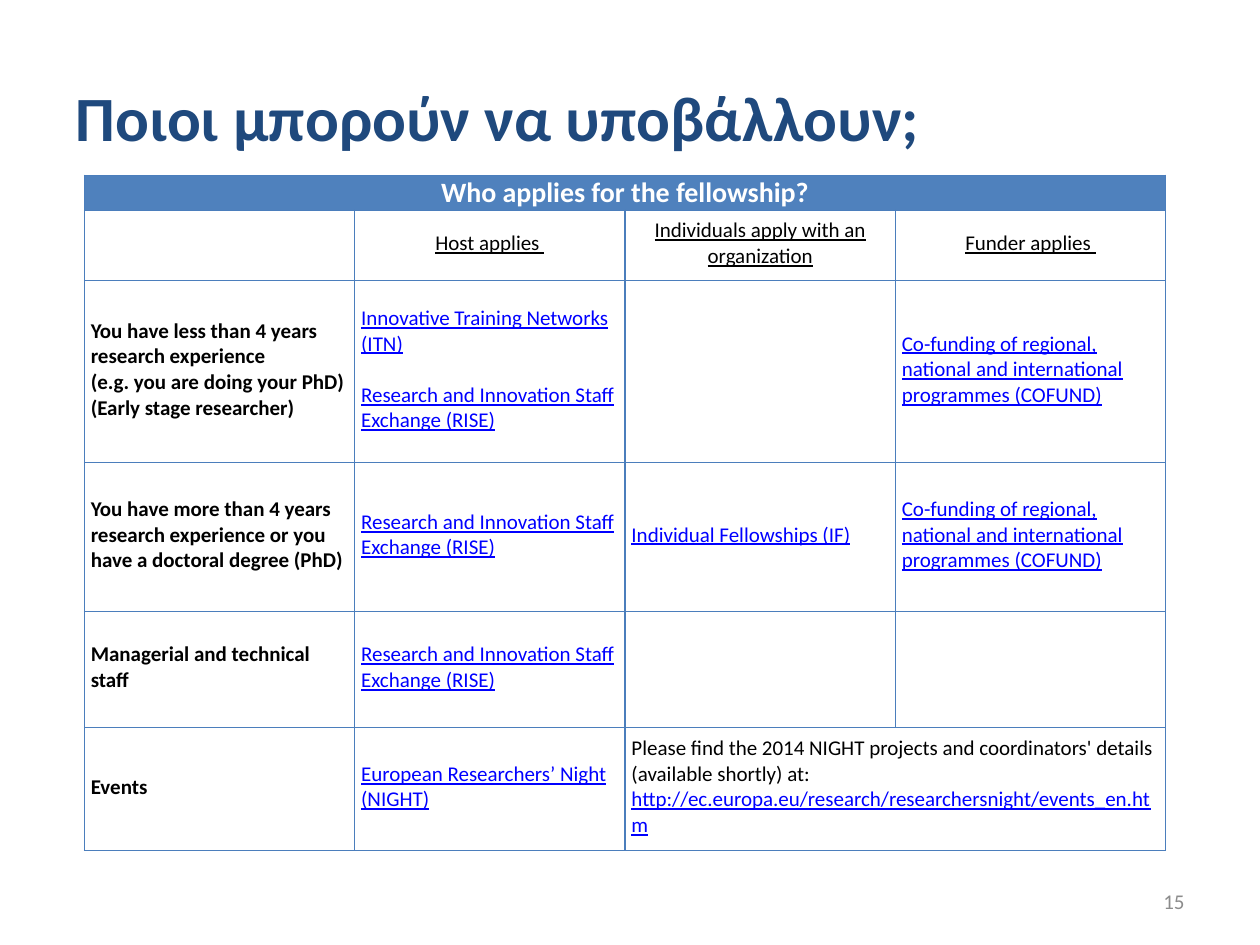
import pptx
import pptx.util
import pptx.dml.color
import pptx.enum.text
import pptx.oxml
import pptx.oxml.ns

Cm = pptx.util.Cm
Pt = pptx.util.Pt
ALIGN = pptx.enum.text.PP_ALIGN
MID = pptx.enum.text.MSO_ANCHOR.MIDDLE

HUES = {"title": "1F497D", "band": "4F81BD", "edge": "4B7EBC", "link": "0000FF",
        "text": "000000", "white": "FFFFFF", "page": "8C8C8C"}

# style: size, colour, bold, underline
STYLES = {"title": (36, "title", True, False), "band": (16, "white", True, False),
          "head": (12, "text", False, True), "side": (12, "text", True, False),
          "link": (12, "link", False, True), "text": (12, "text", False, False),
          "page": (12, "page", False, False)}

TITLE = "Ποιοι μπορούν να υποβάλλουν;"
BAND = "Who applies for the fellowship?"
PAGE = "15"

ITN = [("link", "Innovative Training Networks (ITN)")]
RISE = [("link", "Research and Innovation Staff Exchange (RISE)")]
FUND = [("link", "Co-funding of regional, national and international programmes (COFUND)")]
SOLO = [("link", "Individual Fellowships (IF)")]
NIGHT = [("link", "European Researchers’ Night (NIGHT)")]
NOTE = [("text", "Please find the 2014 NIGHT projects and coordinators' details "
                 "(available shortly) at:"),
        ("break", ""),
        ("link", "http://ec.europa.eu/research/researchersnight/events_en.htm")]
LESS = [("side", "You have less than 4 years research experience "),
        ("break", ""),
        ("side", "(e.g. you are doing your PhD) (Early stage researcher)")]
MORE = [("side", "You have more than 4 years research experience "
                 "or you have a doctoral degree (PhD)")]

# each cell is a list of paragraphs, each paragraph a list of runs
ROWS = [
    [[[("band", BAND)]], [], [], []],
    [[], [[("head", "Host applies ")]],
     [[("head", "Individuals apply with an organization")]],
     [[("head", "Funder applies ")]]],
    [[LESS], [ITN, RISE], [], [FUND]],
    [[MORE], [RISE], [SOLO], [FUND]],
    [[[("side", "Managerial and technical staff")]], [RISE], [], []],
    [[[("side", "Events")]], [NIGHT], [NOTE], []],
]
SPANS = [((0, 0), (0, 3)), ((5, 2), (5, 3))]
HIGHS = [0.71, 1.41, 3.67, 3, 2.34, 2.48]
WIDE = 5.45


def hue(name):
    return pptx.dml.color.RGBColor.from_string(HUES[name])


def fill_para(para, runs, align=ALIGN.LEFT):
    para.alignment = align
    for kind, text in runs:
        if kind == "break":
            para.add_line_break()
            continue
        run = para.add_run()
        run.text = text
        size, tint, bold, under = STYLES[kind]
        font = run.font
        font.name, font.size = "Calibri", Pt(size)
        font.bold, font.underline = bold, under
        font.color.rgb = hue(tint)


def add_edges(cell):
    props = cell._tc.get_or_add_tcPr()
    for side in ("lnL", "lnR", "lnT", "lnB"):
        props.append(pptx.oxml.parse_xml(
            f'<a:{side} {pptx.oxml.ns.nsdecls("a")} w="{Pt(0.75)}"><a:solidFill>'
            f'<a:srgbClr val="{HUES["edge"]}"/></a:solidFill></a:{side}>'))


def fill_cell(cell, paras, top):
    """Style one cell; top marks the banner row, which has no margins."""
    add_edges(cell)
    if top:
        cell.fill.solid()
        cell.fill.fore_color.rgb = hue("band")
    else:
        cell.fill.background()
    pad, low = (0, 0) if top else (0.13, 0.2)
    cell.margin_left = cell.margin_right = cell.margin_top = Cm(pad)
    cell.margin_bottom = Cm(low)
    cell.vertical_anchor = MID
    frame = cell.text_frame
    for i, runs in enumerate(paras):
        para = frame.add_paragraph() if i else frame.paragraphs[0]
        mid = runs[0][0] in ("band", "head")
        fill_para(para, runs, ALIGN.CENTER if mid else ALIGN.LEFT)
        if i:
            para.space_before = Pt(14.6)


def add_grid(slide):
    shape = slide.shapes.add_table(len(ROWS), len(ROWS[0]), Cm(1.7), Cm(3.53),
                                   Cm(WIDE * len(ROWS[0])), Cm(sum(HIGHS)))
    grid = shape.table
    grid.horz_banding = False
    for col in grid.columns:
        col.width = Cm(WIDE)
    for r, (high, row) in enumerate(zip(HIGHS, ROWS)):
        grid.rows[r].height = Cm(high)
        for c, paras in enumerate(row):
            fill_cell(grid.cell(r, c), paras, r == 0)
    for first, last in SPANS:
        grid.cell(*first).merge(grid.cell(*last))


def main():
    deck = pptx.Presentation()
    deck.slide_width, deck.slide_height = Cm(25.4), Cm(19.05)
    slide = deck.slides.add_slide(deck.slide_layouts[5])

    title = slide.shapes.title
    title.left, title.top = Cm(1.27), Cm(0.76)
    title.width, title.height = Cm(22.86), Cm(3.18)
    title.text_frame.vertical_anchor = MID
    fill_para(title.text_frame.paragraphs[0], [("title", TITLE)])

    add_grid(slide)

    page = slide.shapes.add_textbox(Cm(18.21), Cm(17.65), Cm(5.92), Cm(1.02))
    page.text_frame.word_wrap = True
    page.text_frame.vertical_anchor = MID
    fill_para(page.text_frame.paragraphs[0], [("page", PAGE)], ALIGN.RIGHT)

    deck.save("out.pptx")


if __name__ == "__main__":
    main()
